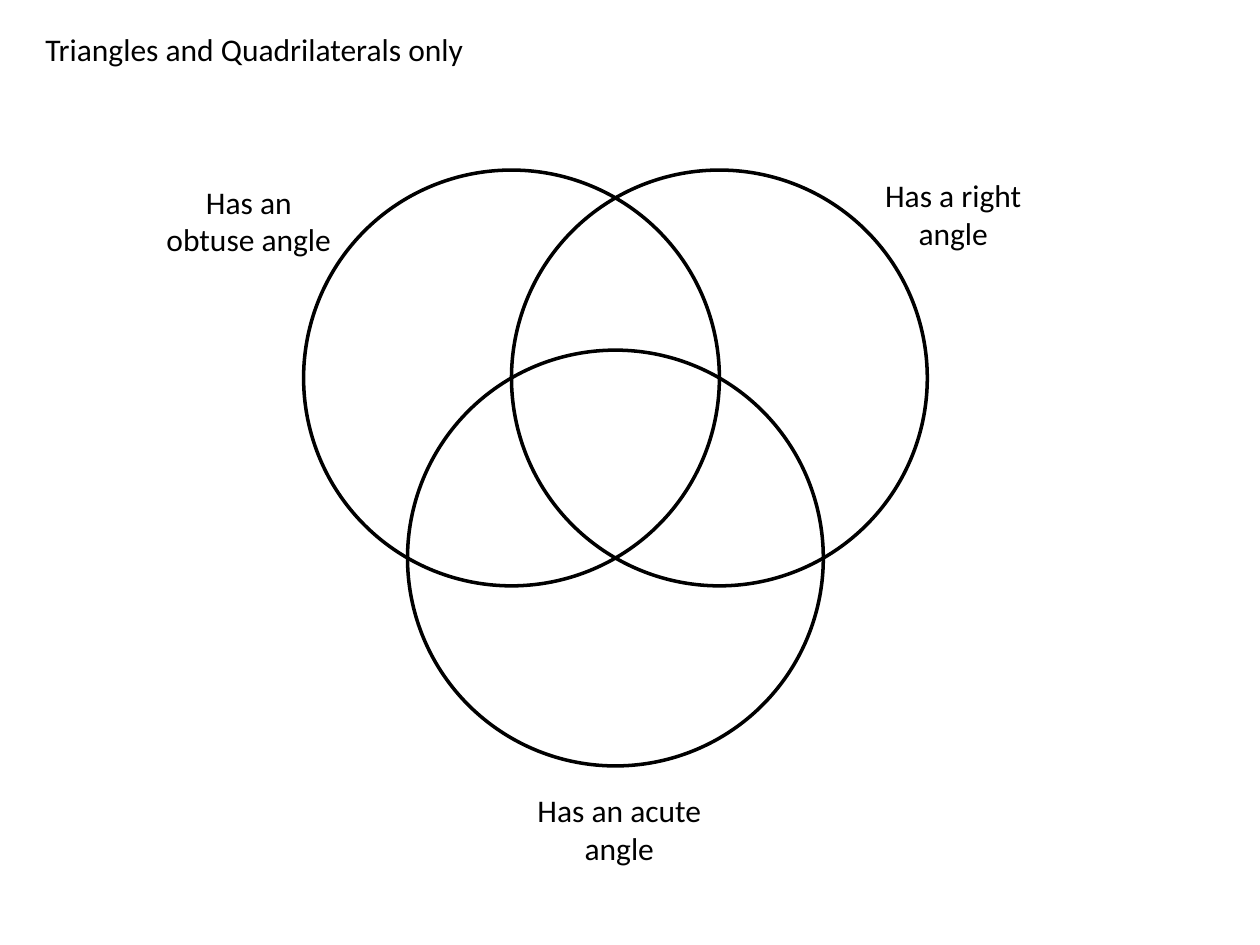
import math
from pptx import Presentation
from pptx import util as u
from pptx.dml import color
from pptx.enum import shapes, text

colours = {"ink": "000000"}
ink = color.RGBColor.from_string(colours["ink"])
font_format = {"name": "Calibri", "size": u.Pt(18), "bold": False}
frame_format = {
    "vertical_anchor": text.MSO_ANCHOR.TOP,
    "auto_size": text.MSO_AUTO_SIZE.SHAPE_TO_FIT_TEXT,
    "margin_left": u.Pt(7.2),
    "margin_right": u.Pt(7.2),
    "margin_top": u.Pt(3.6),
    "margin_bottom": u.Pt(3.6),
}


def write_text(shape, wording, alignment, wrap):
    frame = shape.text_frame
    frame.text = wording
    frame.word_wrap = wrap
    for name, value in frame_format.items():
        setattr(frame, name, value)
    paragraph = frame.paragraphs[0]
    paragraph.alignment = alignment
    font = paragraph.runs[0].font
    for name, value in font_format.items():
        setattr(font, name, value)
    font.color.rgb = ink


presentation = Presentation()
presentation.slide_width = u.Pt(720)
presentation.slide_height = u.Pt(540)
slide = presentation.slides.add_slide(presentation.slide_layouts[5])

title = slide.shapes.title
title_place = {"left": 18.7, "top": 13.7, "width": 260, "height": 29}
for name, value in title_place.items():
    setattr(title, name, u.Pt(value))
write_text(title, "Triangles and Quadrilaterals only", text.PP_ALIGN.LEFT, False)

radius = 118.8
venn_left, venn_top = 173.5, 97.2
venn = slide.shapes.add_group_shape()
for across, down in [(0, 0), (1, 0), (0.5, math.sqrt(3) / 2)]:
    circle = venn.shapes.add_shape(
        shapes.MSO_SHAPE.OVAL,
        u.Pt(venn_left + across * radius),
        u.Pt(venn_top + down * radius),
        u.Pt(2 * radius),
        u.Pt(2 * radius),
    )
    circle.shadow.inherit = False
    circle.fill.background()
    circle.line.color.rgb = ink
    circle.line.width = u.Pt(2)

labels = [
    ("Has an obtuse angle", 85.7, 100.8),
    ("Has a right angle", 488.2, 97.2),
    ("Has an acute angle", 297.4, 448.6),
]
for wording, left, top in labels:
    label = slide.shapes.add_textbox(u.Pt(left), u.Pt(top), u.Pt(113), u.Pt(51))
    write_text(label, wording, text.PP_ALIGN.CENTER, True)

presentation.save("out.pptx")
